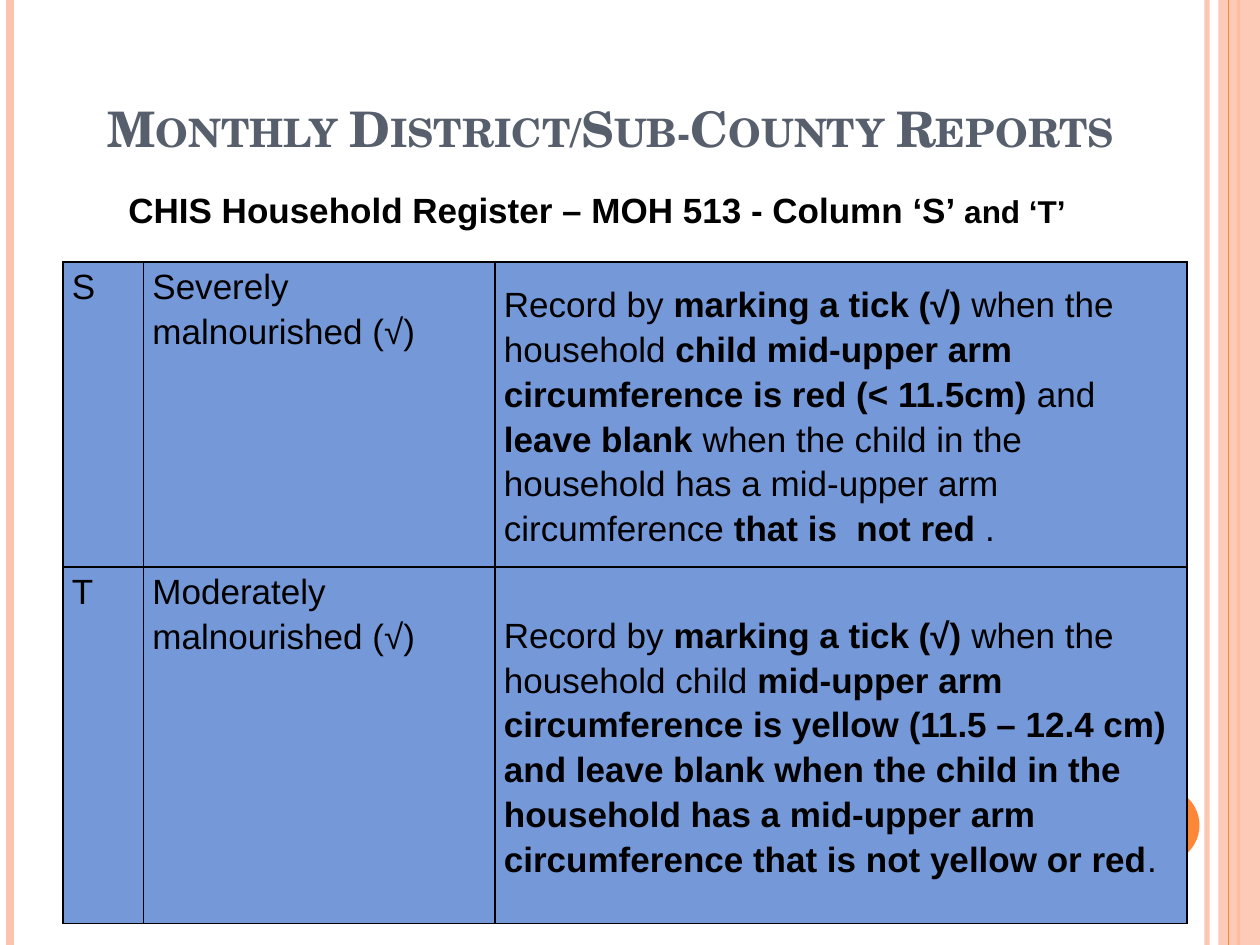
"""Build the household register slide for columns S and T."""
from dataclasses import dataclass

from lxml.etree import SubElement
from pptx import Presentation
from pptx.dml.color import RGBColor
from pptx.enum.shapes import MSO_CONNECTOR, MSO_SHAPE
from pptx.enum.text import MSO_ANCHOR, PP_ALIGN
from pptx.oxml.ns import qn
from pptx.util import Inches, Pt


@dataclass(frozen=True)
class Theme:
    heading_font: str = "TeX Gyre Schola"
    body_font: str = "Arial"
    heading: str = "575F6D"
    text: str = "000000"
    cell: str = "7598D9"
    accent: str = "FE8637"
    pale: str = "FEC3AE"
    title_size: int = 28
    body_size: int = 20
    small_size: int = 18


@dataclass(frozen=True)
class Stripe:
    x: float
    color: str
    width: float
    alpha: int = 100


@dataclass(frozen=True)
class Entry:
    column: str
    label: str
    guidance: tuple[str, ...]
    height: float


THEME = Theme()
SLIDE_W, SLIDE_H = 10, 7.5
COL_WIDTHS = (0.64, 2.79, 5.49)
EDGE_STRIPES = (Stripe(9.58, THEME.pale, 3, 93), Stripe(0.08, THEME.pale, 4.5),
                Stripe(9.83, THEME.accent, 1.5))
BAND_STRIPE = Stripe(9.75, THEME.accent, 0.75)
ENTRIES = (
    Entry("S", "Severely malnourished (√)", (
        "Record by ", "marking a tick (√)", " when the household ",
        "child mid-upper arm circumference is red (< 11.5cm)", " and ", "leave blank ",
        "when the child in the household has a mid-upper arm circumference ",
        "that is  not red ", "."), 2.42),
    Entry("T", "Moderately malnourished (√)", (
        "Record by ", "marking a tick (√) ", "when the household child ",
        "mid-upper arm circumference is yellow (11.5 – 12.4 cm) and leave blank when "
        "the child in the household has a mid-upper arm circumference that is not "
        "yellow or red", "."), 2.83),
)


def set_alpha(parent, alpha: int) -> None:
    for clr in parent.iter(qn("a:srgbClr")):
        SubElement(clr, qn("a:alpha"), val=str(alpha * 1000))


def add_stripe(s, stripe: Stripe) -> None:
    x = Inches(stripe.x)
    line = s.shapes.add_connector(MSO_CONNECTOR.STRAIGHT, x, 0, x, Inches(SLIDE_H))
    line.line.color.rgb = RGBColor.from_string(stripe.color)
    line.line.width = Pt(stripe.width)
    sp_pr = line._element.spPr
    if stripe.alpha < 100:
        set_alpha(sp_pr, stripe.alpha)
    SubElement(sp_pr, qn("a:effectLst"))


def add_block(s, kind: MSO_SHAPE, box: tuple[float, ...], color: str, alpha: int = 100) -> None:
    sp = s.shapes.add_shape(kind, *map(Inches, box))
    sp.shadow.inherit = False
    sp.fill.solid()
    sp.fill.fore_color.rgb = RGBColor.from_string(color)
    sp.line.fill.background()
    if alpha < 100:
        set_alpha(sp._element.spPr, alpha)


def add_run(p, text: str, size: int, bold: bool, font: str = THEME.body_font,
            color: str = THEME.text):
    r = p.add_run()
    r.text = text
    r.font.size, r.font.bold, r.font.name = Pt(size), bold, font
    r.font.color.rgb = RGBColor.from_string(color)
    return r


def add_textbox(s, box: tuple[float, ...], anchor: MSO_ANCHOR):
    tf = s.shapes.add_textbox(*map(Inches, box)).text_frame
    tf.word_wrap = True
    tf.vertical_anchor = anchor
    return tf.paragraphs[0]


def add_borders(cell) -> None:
    tc_pr = cell._tc.get_or_add_tcPr()
    for i, side in enumerate(("lnL", "lnR", "lnT", "lnB")):
        ln = tc_pr.makeelement(qn(f"a:{side}"), {"w": str(Pt(1))})
        SubElement(SubElement(ln, qn("a:solidFill")), qn("a:srgbClr"), val=THEME.text)
        tc_pr.insert(i, ln)


def fill_cell(cell, parts: tuple[str, ...], anchor: MSO_ANCHOR) -> None:
    cell.fill.solid()
    cell.fill.fore_color.rgb = RGBColor.from_string(THEME.cell)
    cell.margin_left = cell.margin_right = Inches(0.07)
    cell.margin_top = cell.margin_bottom = 0
    cell.vertical_anchor = anchor
    p = cell.text_frame.paragraphs[0]
    p.line_spacing = 1.15
    for i, part in enumerate(parts):
        add_run(p, part, THEME.body_size, i % 2 == 1)
    add_borders(cell)


def add_register(s) -> None:
    height = sum(entry.height for entry in ENTRIES)
    table = s.shapes.add_table(len(ENTRIES), len(COL_WIDTHS), Inches(0.5), Inches(2.08),
                               Inches(sum(COL_WIDTHS)), Inches(height)).table
    table.first_row = table.horz_banding = False
    for col, width in zip(table.columns, COL_WIDTHS):
        col.width = Inches(width)
    for row, entry in zip(table.rows, ENTRIES):
        row.height = Inches(entry.height)
        column, label, guidance = row.cells
        fill_cell(column, (entry.column,), MSO_ANCHOR.TOP)
        fill_cell(label, (entry.label,), MSO_ANCHOR.TOP)
        fill_cell(guidance, entry.guidance, MSO_ANCHOR.MIDDLE)


def main() -> None:
    prs = Presentation()
    prs.slide_width, prs.slide_height = Inches(SLIDE_W), Inches(SLIDE_H)
    s = prs.slides.add_slide(prs.slide_layouts[6])

    for stripe in EDGE_STRIPES:
        add_stripe(s, stripe)
    add_block(s, MSO_SHAPE.RECTANGLE, (9.67, 0, 0.33, SLIDE_H), THEME.pale, 87)
    add_stripe(s, BAND_STRIPE)
    add_block(s, MSO_SHAPE.OVAL, (8.92, 6.25, 0.6, 0.6), THEME.accent)

    p = add_textbox(s, (0.52, 0.15, 8.75, 1.15), MSO_ANCHOR.BOTTOM)
    p.alignment = PP_ALIGN.CENTER
    r = add_run(p, "Monthly District/Sub-County Reports ", THEME.title_size, True,
                THEME.heading_font, THEME.heading)
    r.font._element.set("cap", "small")

    add_register(s)

    p = add_textbox(s, (0.92, 1.45, 9, 0.74), MSO_ANCHOR.TOP)
    add_run(p, "CHIS Household Register – MOH 513 - Column ‘S’ ", THEME.body_size, True)
    add_run(p, "and ‘T’", THEME.small_size, True)

    prs.save("out.pptx")


if __name__ == "__main__":
    main()
